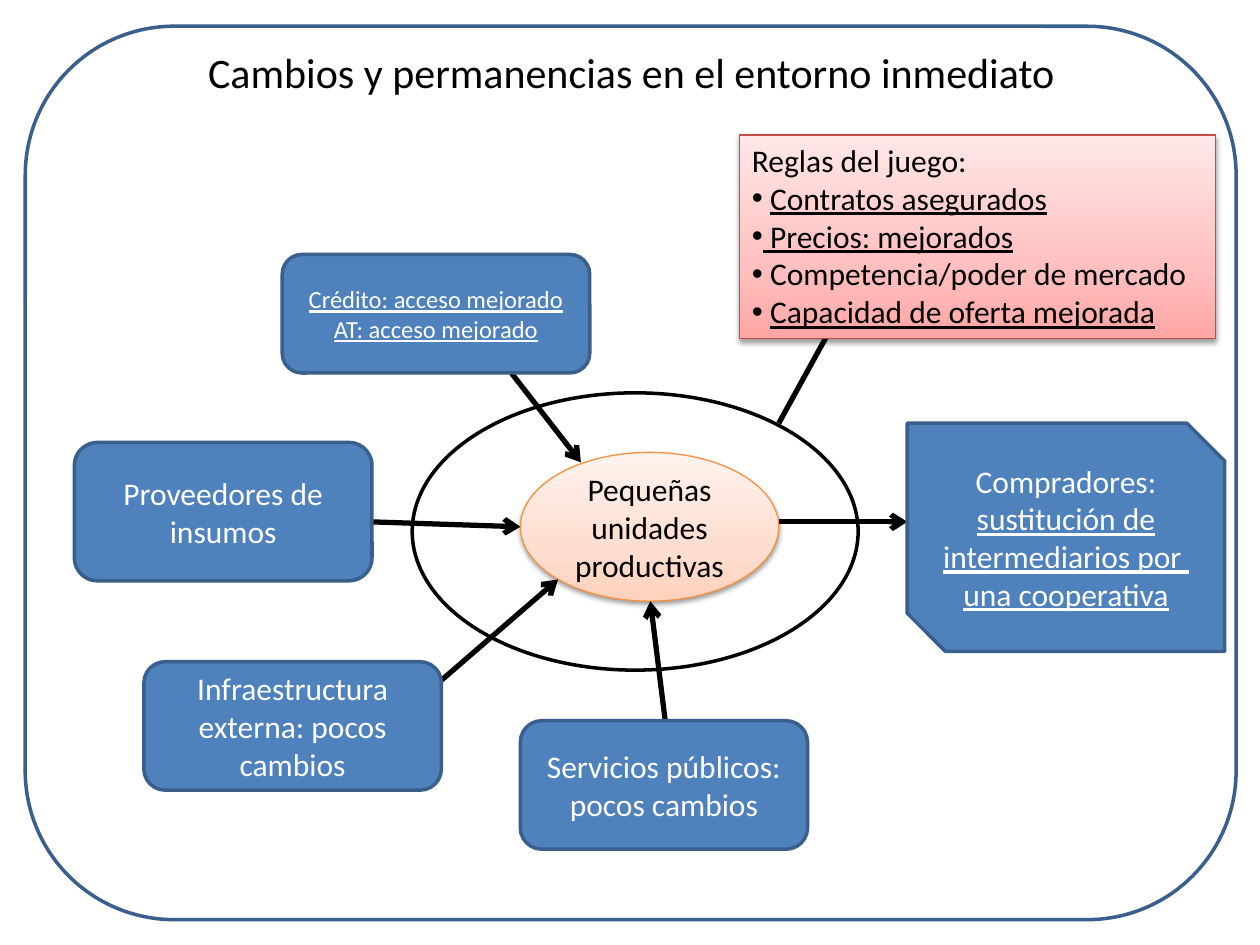
from dataclasses import dataclass
from typing import Optional

from lxml import etree
from pptx import Presentation
from pptx import util as u
from pptx.dml.color import RGBColor
from pptx.enum import shapes, text
from pptx.oxml import ns

FONT = "Calibri"
BLACK, WHITE = "000000", "FFFFFF"
BLUE, DARK_BLUE = "4F81BD", "3A5F8C"
SHAPE = shapes.MSO_SHAPE
CENTER, LEFT = text.PP_ALIGN.CENTER, text.PP_ALIGN.LEFT

# A paragraph is a list of (text, underlined) runs.
Runs = list[tuple[str, bool]]


@dataclass
class Box:
    kind: int
    place: tuple[float, float, float, float]
    paragraphs: tuple[Runs, ...] = ()
    size: int = 18
    fill: Optional[str] = BLUE
    gradient: tuple[tuple[int, str], ...] = ()
    line: str = DARK_BLUE
    line_width: float = 2
    color: str = WHITE
    align: int = CENTER
    anchor: int = text.MSO_ANCHOR.MIDDLE


@dataclass
class Link:
    start: tuple[float, float]
    end: tuple[float, float]
    arrow: bool = True


def rgb(value: str) -> RGBColor:
    return RGBColor.from_string(value)


def add_xml(parent, tag: str, **attributes):
    return etree.SubElement(parent, ns.qn(tag), attributes)


def write_paragraph(paragraph, runs: Runs, size: int, color: str, align: int) -> None:
    paragraph.alignment = align
    for words, underlined in runs:
        run = paragraph.add_run()
        run.text = words
        formats = {"name": FONT, "size": u.Pt(size), "underline": underlined}
        for name, value in formats.items():
            setattr(run.font, name, value)
        run.font.color.rgb = rgb(color)


def add_bullet(paragraph) -> None:
    properties = paragraph._p.get_or_add_pPr()
    add_xml(properties, "a:buFont", typeface="Arial")
    add_xml(properties, "a:buChar", char="•")


def apply_gradient(shape, stops: tuple[tuple[int, str], ...]) -> None:
    """Fill from bottom to top, with a soft shadow below."""
    shape.fill.gradient()
    shape.fill.gradient_angle = 90
    stop_list = shape._element.spPr.find(".//" + ns.qn("a:gsLst"))
    for old_stop in list(stop_list):
        stop_list.remove(old_stop)
    for percent, color in stops:
        stop = add_xml(stop_list, "a:gs", pos=str(percent * 1000))
        add_xml(stop, "a:srgbClr", val=color)

    effects = shape._element.spPr.find(ns.qn("a:effectLst"))
    shadow = add_xml(effects, "a:outerShdw", blurRad=str(u.Pt(3.1)),
                     dist=str(u.Pt(1.6)), dir="5400000", rotWithShape="0")
    shadow_color = add_xml(shadow, "a:srgbClr", val=BLACK)
    add_xml(shadow_color, "a:alpha", val="38000")


def draw_box(slide, box: Box):
    shape = slide.shapes.add_shape(box.kind, *map(u.Cm, box.place))
    shape.shadow.inherit = False
    shape.line.color.rgb = rgb(box.line)
    shape.line.width = u.Pt(box.line_width)
    if box.gradient:
        apply_gradient(shape, box.gradient)
    elif box.fill:
        shape.fill.solid()
        shape.fill.fore_color.rgb = rgb(box.fill)
    else:
        shape.fill.background()

    frame = shape.text_frame
    frame.word_wrap = True
    frame.vertical_anchor = box.anchor
    for index, runs in enumerate(box.paragraphs):
        paragraph = frame.add_paragraph() if index else frame.paragraphs[0]
        write_paragraph(paragraph, runs, box.size, box.color, box.align)
    return shape


def draw_link(slide, link: Link) -> None:
    connector = slide.shapes.add_connector(
        shapes.MSO_CONNECTOR.STRAIGHT, *map(u.Cm, link.start + link.end))
    connector.line.color.rgb = rgb(BLACK)
    connector.line.width = u.Pt(3)
    if link.arrow:
        add_xml(connector.line._get_or_add_ln(), "a:tailEnd", type="arrow")
    add_xml(connector._element.spPr, "a:effectLst")


PRODUCERS = Box(
    SHAPE.OVAL, (10.49, 9.12, 5.21, 3), ([("Pequeñas unidades productivas", False)],),
    gradient=((0, "FFD2BD"), (35, "FFDED0"), (100, "FFF2ED")),
    line="F69240", line_width=0.75, color=BLACK)

ARROWS = (
    Link((10.31, 7.52), (11.71, 9.32)),
    Link((7.49, 10.52), (10.49, 10.62)),
    Link((8.89, 13.72), (11.25, 11.68)),
    Link((13.41, 14.53), (13.11, 12.12)),
    Link((15.7, 10.52), (18.29, 10.52)),
)

ACTORS = (
    Box(SHAPE.ROUNDED_RECTANGLE, (5.69, 5.13, 6.2, 2.39),
        ([("Crédito: acceso mejorado", True)], [("AT: acceso mejorado", True)]), size=14),
    Box(SHAPE.ROUNDED_RECTANGLE, (1.5, 8.92, 6, 2.79),
        ([("Proveedores de insumos", False)],)),
    Box(SHAPE.ROUNDED_RECTANGLE, (2.9, 13.34, 6, 2.59),
        ([("Infraestructura externa: pocos cambios", False)],)),
    Box(SHAPE.ROUNDED_RECTANGLE, (10.49, 14.53, 5.79, 2.59),
        ([("Servicios públicos: pocos cambios", False)],)),
    Box(SHAPE.SNIP_2_DIAG_RECTANGLE, (18.29, 8.53, 6.4, 4.6),
        ([("Compradores: ", False),
          ("sustitución de intermediarios por  una cooperativa", True)],)),
)

RING = Box(SHAPE.OVAL, (8.31, 7.92, 8.99, 5.59), fill=None, line=BLACK)
RULES_LINK = Link((15.7, 8.53), (16.69, 6.73), arrow=False)
RULES = Box(
    SHAPE.RECTANGLE, (14.91, 2.72, 9.6, 4.11),
    ([("Reglas del juego:", False)],
     [(" ", False), ("Contratos asegurados", True)],
     [(" Precios: mejorados", True)],
     [(" Competencia/poder de mercado", False)],
     [(" ", False), ("Capacidad de oferta mejorada", True)]),
    gradient=((0, "FFA6A5"), (35, "FFC0BF"), (100, "FFE7E7")),
    line="BF4C48", line_width=0.75, color=BLACK, align=LEFT, anchor=text.MSO_ANCHOR.TOP)
BORDER = Box(SHAPE.ROUNDED_RECTANGLE, (0.51, 0.53, 24.41, 18.01), fill=None)


def main() -> None:
    presentation = Presentation()
    presentation.slide_width, presentation.slide_height = u.Cm(25.4), u.Cm(19.05)
    slide = presentation.slides.add_slide(presentation.slide_layouts[5])

    # Title
    title = slide.shapes.title
    place = {"left": 1.3, "top": 0.74, "width": 22.86, "height": 1.4}
    for name, value in place.items():
        setattr(title, name, u.Cm(value))
    title.text_frame.vertical_anchor = text.MSO_ANCHOR.MIDDLE
    write_paragraph(title.text_frame.paragraphs[0],
                    [("Cambios y permanencias en el entorno inmediato", False)],
                    24, BLACK, CENTER)

    # Producers and the actors around them
    draw_box(slide, PRODUCERS)
    for arrow in ARROWS:
        draw_link(slide, arrow)
    for actor in ACTORS:
        draw_box(slide, actor)

    # Immediate surroundings and their rules
    draw_box(slide, RING)
    draw_link(slide, RULES_LINK)
    rules = draw_box(slide, RULES)
    rules.text_frame.auto_size = text.MSO_AUTO_SIZE.SHAPE_TO_FIT_TEXT
    for paragraph in rules.text_frame.paragraphs[1:]:
        add_bullet(paragraph)

    # Outer border
    draw_box(slide, BORDER)
    presentation.save("out.pptx")


if __name__ == "__main__":
    main()
